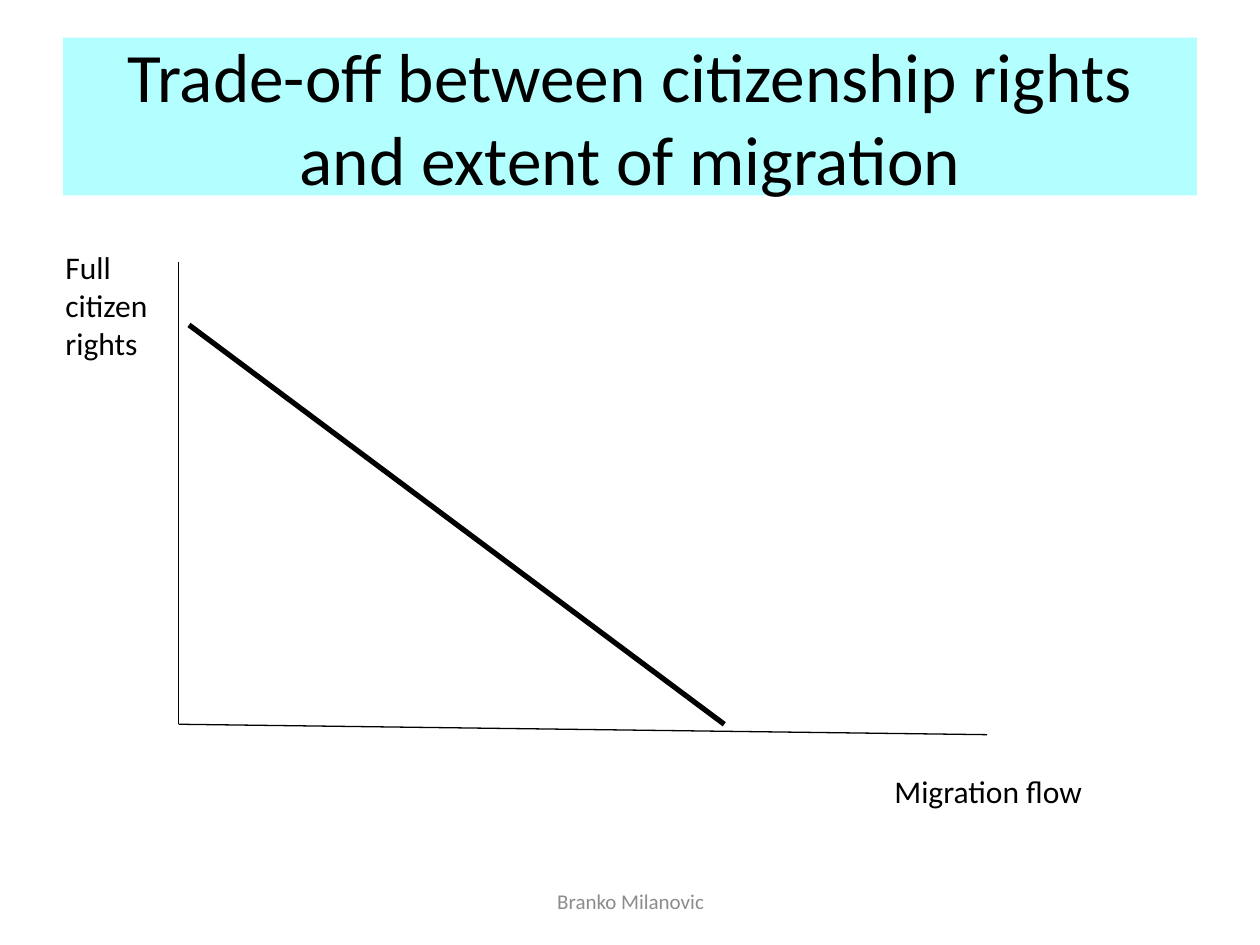
from pptx import Presentation
from pptx.dml.color import RGBColor
from pptx.enum import shapes, text
from pptx.oxml.ns import qn
from pptx.util import Cm, Pt
from lxml import etree

BLACK = RGBColor(0x00, 0x00, 0x00)
GREY = RGBColor(0x8C, 0x8C, 0x8C)
PALE_CYAN = RGBColor(0xB3, 0xFF, 0xFF)
FONT = "Calibri"

TITLE = "Trade-off between citizenship rights and extent of migration"

# Text, (left, top, width, height) in cm, size, colour, alignment, anchor
LABELS = [
    ("Branko Milanovic", (8.69, 17.65, 8.05, 1.02), 12, GREY,
     text.PP_ALIGN.CENTER, text.MSO_ANCHOR.MIDDLE),
    ("Full citizen rights", (1.07, 4.88, 2.74, 2.57), 18, BLACK,
     text.PP_ALIGN.LEFT, text.MSO_ANCHOR.TOP),
    ("Migration flow", (17.78, 15.44, 6.35, 1.02), 18, BLACK,
     text.PP_ALIGN.LEFT, text.MSO_ANCHOR.TOP),
]

# Start and end in cm, line width in points
ORIGIN = (3.6, 14.6)
LINES = [
    ((3.6, 5.28), ORIGIN, 0.75),            # rights axis
    (ORIGIN, (19.9, 14.81), 0.75),          # migration axis
    ((3.81, 6.55), (14.6, 14.6), 3),        # trade-off
]


def write(shape, content, size, color, alignment, anchor):
    frame = shape.text_frame
    frame.text = content
    frame.word_wrap = True
    frame.auto_size = text.MSO_AUTO_SIZE.NONE
    frame.vertical_anchor = anchor
    paragraph = frame.paragraphs[0]
    paragraph.alignment = alignment
    font = paragraph.runs[0].font
    font.name, font.size, font.color.rgb = FONT, Pt(size), color


def place(shape, box):
    shape.left, shape.top, shape.width, shape.height = map(Cm, box)


def add_line(slide, start, end, width):
    line = slide.shapes.add_connector(
        shapes.MSO_CONNECTOR.STRAIGHT, *map(Cm, start + end))
    line.line.color.rgb = BLACK
    line.line.width = Pt(width)
    etree.SubElement(line._element.spPr, qn("a:effectLst"))


def main():
    presentation = Presentation()
    presentation.slide_width, presentation.slide_height = Cm(25.4), Cm(19.05)
    slide = presentation.slides.add_slide(presentation.slide_layouts[5])

    title = slide.shapes.title
    place(title, (1.27, 0.76, 22.86, 3.18))
    title.fill.solid()
    title.fill.fore_color.rgb = PALE_CYAN
    write(title, TITLE, 39.6, BLACK,
          text.PP_ALIGN.CENTER, text.MSO_ANCHOR.MIDDLE)

    for start, end, width in LINES:
        add_line(slide, start, end, width)

    for content, box, *style in LABELS:
        label = slide.shapes.add_textbox(*map(Cm, box))
        write(label, content, *style)

    presentation.save("out.pptx")


if __name__ == "__main__":
    main()
